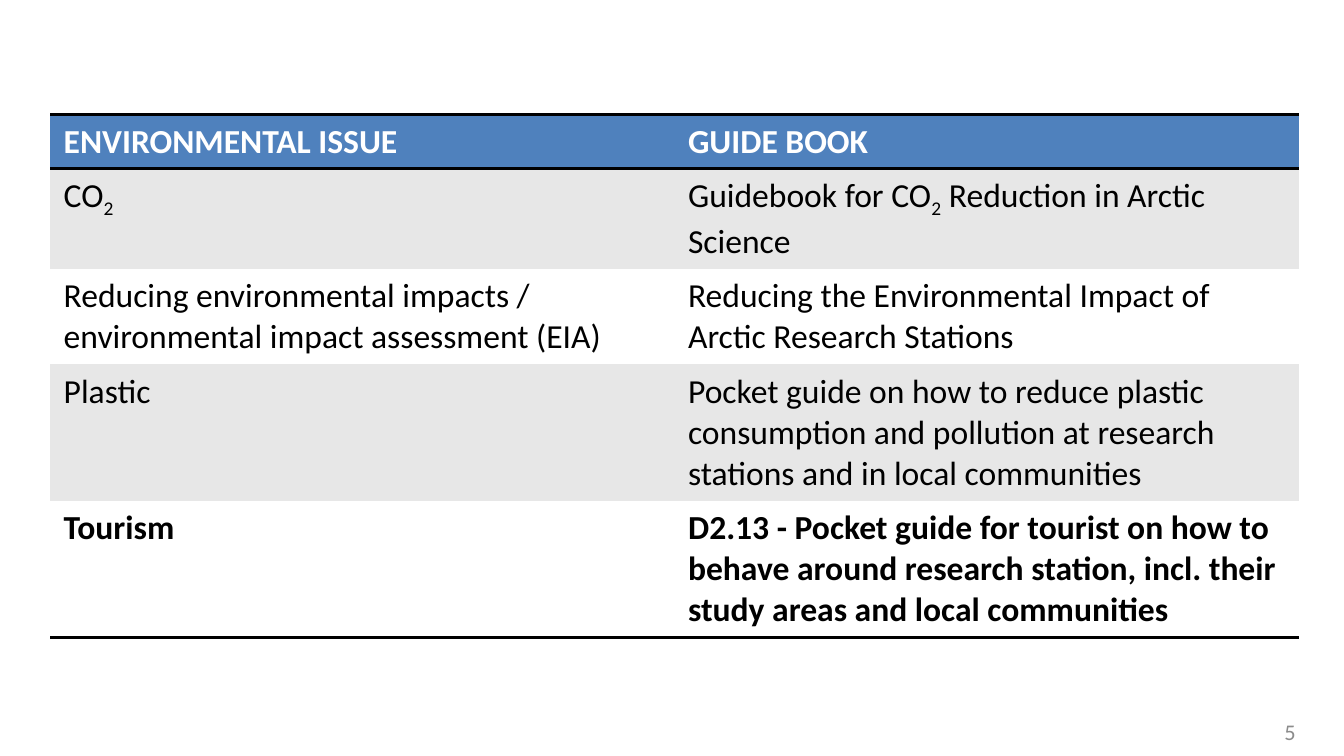
from lxml import etree
from pptx import Presentation
from pptx.dml.color import RGBColor
from pptx.enum.text import MSO_ANCHOR, PP_ALIGN
from pptx.oxml.ns import qn
from pptx.util import Cm, Pt

MIDDLE = MSO_ANCHOR.MIDDLE
RIGHT = PP_ALIGN.RIGHT
FONT = "Calibri"
PLAIN_TABLE_STYLE = "{2D5ABB26-0587-4C30-8999-92F81FD0307C}"
BLACK, WHITE, BLUE, BAND, GREY = "000000", "FFFFFF", "4F81BD", "E7E7E7", "8C8C8C"

# Text between bars is set as subscript
ROWS = [
    ("ENVIRONMENTAL ISSUE", "GUIDE BOOK"),
    ("CO|2|", "Guidebook for CO|2| Reduction in Arctic Science"),
    ("Reducing environmental impacts / environmental impact assessment (EIA)",
     "Reducing the Environmental Impact of Arctic Research Stations"),
    ("Plastic",
     "Pocket guide on how to reduce plastic consumption and pollution "
     "at research stations and in local communities"),
    ("Tourism",
     "D2.13 - Pocket guide for tourist on how to behave around research "
     "station, incl. their study areas and local communities"),
]


def color(value):
    return RGBColor.from_string(value)


def format_span(span, size, value, bold=False):
    span.font.name = FONT
    span.font.size = Pt(size)
    span.font.bold = bold
    span.font.color.rgb = color(value)


def add_border(cell, side, value, width):
    """Draw one side ("T" or "B") of a cell; borders precede the fill."""
    properties = cell._tc.get_or_add_tcPr()
    line = etree.Element(qn(f"a:ln{side}"), w=str(Pt(width)))
    fill = etree.SubElement(line, qn("a:solidFill"))
    etree.SubElement(fill, qn("a:srgbClr"), val=value)
    properties.insert(len(properties.findall(qn("a:lnT"))), line)


def fill_cell(cell, text, fill, value, bold):
    cell.fill.solid()
    cell.fill.fore_color.rgb = color(fill)
    para = cell.text_frame.paragraphs[0]
    for index, part in enumerate(text.split("|")):
        if not part:
            continue
        span = para.add_run()
        span.text = part
        format_span(span, 18, value, bold)
        if index % 2:
            span._r.get_or_add_rPr().set("baseline", "-25000")


def add_guide_table(page):
    frame = page.shapes.add_table(len(ROWS), 2, Cm(0.95), Cm(2.16), Cm(23.6), Cm(9.68))
    table = frame.table
    table._tbl.tblPr.find(qn("a:tableStyleId")).text = PLAIN_TABLE_STYLE
    last = len(ROWS) - 1
    for number, texts in enumerate(ROWS):
        table.rows[number].height = Cm(1.03)
        header = number == 0
        fill = BLUE if header else BAND if number % 2 else WHITE
        for column, text in enumerate(texts):
            cell = table.cell(number, column)
            fill_cell(cell, text, fill, WHITE if header else BLACK,
                      bold=number in (0, last))
            # Rules above and below the header and under the last row
            if header:
                add_border(cell, "T", BLACK, 2)
            if number in (0, last):
                add_border(cell, "B", BLACK, 2)
    frame.height = Cm(9.68)


def add_page_number(page, number):
    box = page.shapes.add_textbox(Cm(18.82), Cm(13.44), Cm(5.92), Cm(0.76))
    box.text_frame.word_wrap = True
    box.text_frame.vertical_anchor = MIDDLE
    para = box.text_frame.paragraphs[0]
    para.text = number
    para.alignment = RIGHT
    format_span(para.runs[0], 12, GREY)


def main():
    deck = Presentation()
    deck.slide_width, deck.slide_height = Cm(25.4), Cm(14.29)
    page = deck.slides.add_slide(deck.slide_layouts[6])
    add_guide_table(page)
    add_page_number(page, "5")
    deck.save("out.pptx")


if __name__ == "__main__":
    main()
